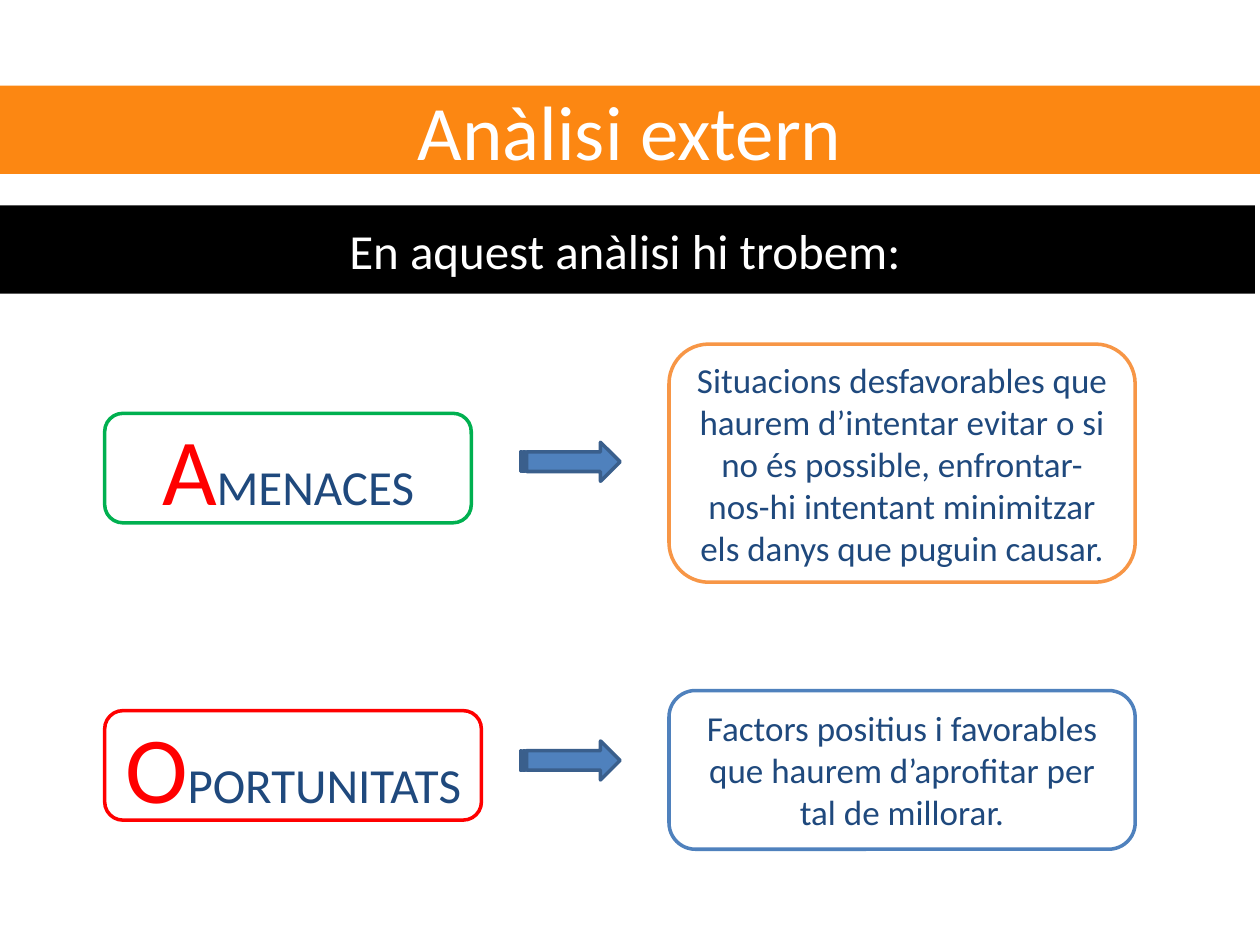
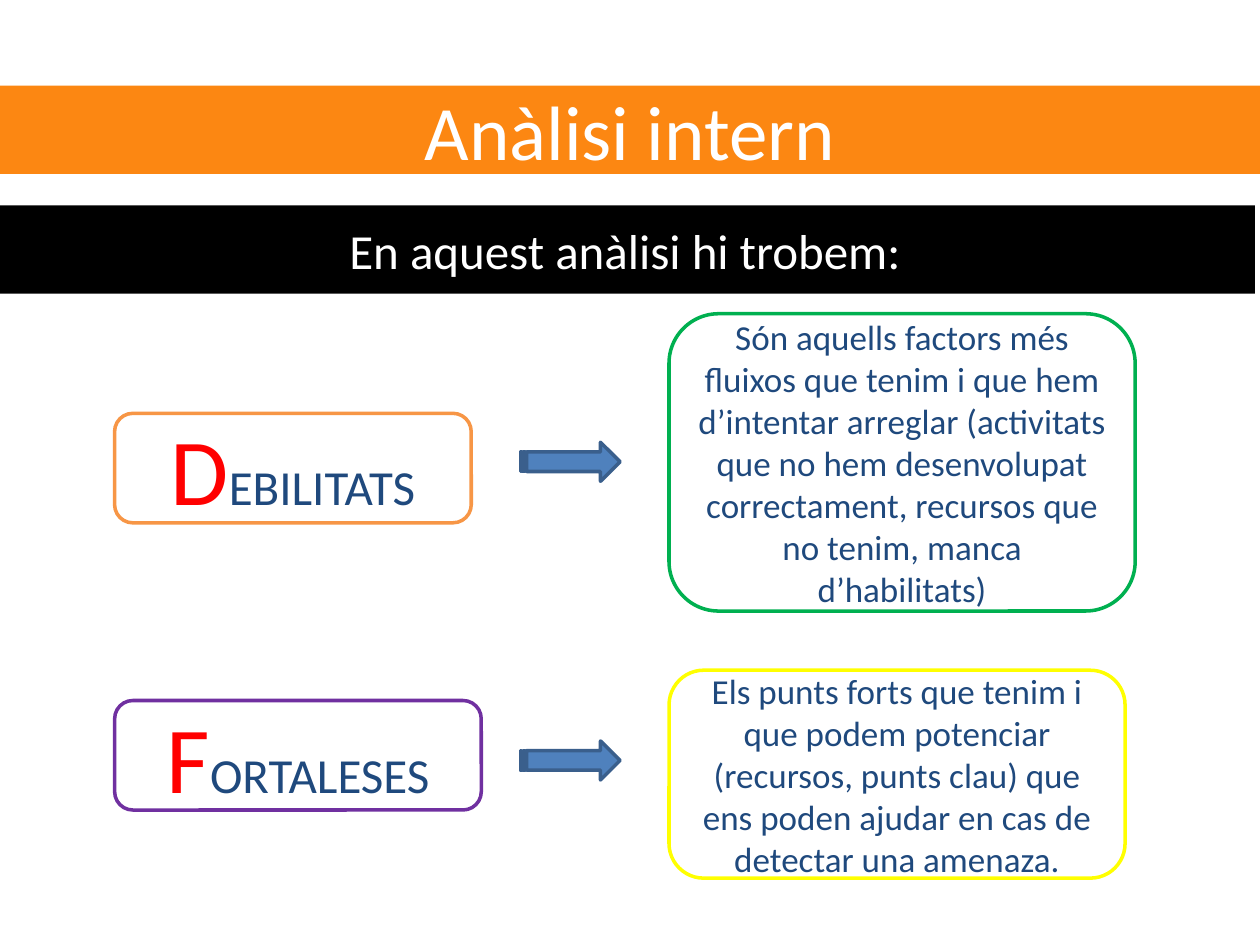
from pptx import Presentation
from pptx.dml.color import RGBColor
from pptx.enum import shapes, text
from pptx.util import Pt

COLORS = {
    "orange_band": "FC8712", "black": "000000", "white": "FFFFFF",
    "navy": "1F497D", "red": "FF0000", "green": "00B050",
    "orange": "F79646", "blue": "4F81BD", "dark_blue": "3A5F8C",
    "purple": "7030A0", "yellow": "FFFF00",
}
FONT = "Calibri"
LABEL_HEIGHT = 62.6
DESCRIPTION_LEFT = 382.3
ARROW_TOPS = (252.7, 423.4)

# Each factor: (word, color, left, top, width), (description, color, top, width, height)
ANALYSES = [
    ("Anàlisi extern", [
        (("AMENACES", "green", 59.8, 236.2, 209.5),
         ("Situacions desfavorables que haurem d’intentar evitar o si no és "
          "possible, enfrontar-nos-hi intentant minimitzar els danys que "
          "puguin causar.", "orange", 196.6, 266.4, 136.1)),
        (("OPORTUNITATS", "red", 59.8, 406.1, 215.3),
         ("Factors positius i favorables que haurem d’aprofitar per tal de "
          "millorar.", "blue", 394.6, 266.4, 90.7)),
    ]),
    ("Anàlisi intern", [
        (("DEBILITATS", "orange", 65.5, 236.2, 203.8),
         ("Són aquells factors més fluixos que tenim i que hem d’intentar "
          "arreglar (activitats que no hem desenvolupat correctament, "
          "recursos que no tenim, manca d’habilitats)",
          "green", 179.3, 266.4, 169.9)),
        (("FORTALESES", "purple", 65.5, 400.3, 209.5),
         ("Els punts forts que tenim i que podem potenciar (recursos, punts "
          "clau) que ens poden ajudar en cas de detectar una amenaza.",
          "yellow", 383, 260.6, 118.8)),
    ]),
]


class SlideBuilder:
    def __init__(self):
        self.presentation = Presentation()
        self.presentation.slide_width = Pt(720)
        self.presentation.slide_height = Pt(540)
        self.slide = None

    def new_slide(self):
        self.slide = self.presentation.slides.add_slide(
            self.presentation.slide_layouts[6])

    def add_shape(self, kind, box, fill, line=None):
        shape = self.slide.shapes.add_shape(kind, *(Pt(value) for value in box))
        shape.shadow.inherit = False
        shape.fill.solid()
        shape.fill.fore_color.rgb = RGBColor.from_string(COLORS[fill])
        if line:
            shape.line.color.rgb = RGBColor.from_string(COLORS[line])
            shape.line.width = Pt(2)
        else:
            shape.line.fill.background()
        return shape

    def add_centred_text(self, shape, *runs):
        """Put (words, size, color) runs in one paragraph."""
        frame = shape.text_frame
        frame.word_wrap = True
        frame.vertical_anchor = text.MSO_ANCHOR.MIDDLE
        paragraph = frame.paragraphs[0]
        paragraph.alignment = text.PP_ALIGN.CENTER
        for words, size, color in runs:
            run = paragraph.add_run()
            run.text = words
            run.font.name = FONT
            run.font.size = Pt(size)
            run.font.color.rgb = RGBColor.from_string(COLORS[color])

    def band(self, words, left, top, size, fill):
        shape = self.add_shape(shapes.MSO_SHAPE.RECTANGLE,
                               (left, top, 720, 50.4), fill)
        self.add_centred_text(shape, (words, size, "white"))

    def rounded_box(self, box, line, *runs):
        shape = self.add_shape(shapes.MSO_SHAPE.ROUNDED_RECTANGLE,
                               box, "white", line)
        self.add_centred_text(shape, *runs)

    def label(self, word, color, left, top, width):
        """Add a factor name with a large red initial."""
        self.rounded_box((left, top, width, LABEL_HEIGHT), color,
                         (word[0], 54, "red"), (word[1:], 28, "navy"))

    def description(self, words, color, top, width, height):
        self.rounded_box((DESCRIPTION_LEFT, top, width, height), color,
                         (words, 20, "navy"))

    def arrow(self, top):
        self.add_shape(shapes.MSO_SHAPE.STRIPED_RIGHT_ARROW,
                       (297.4, top, 56.9, 22.3), "blue", "dark_blue")


def main():
    builder = SlideBuilder()
    for title, factors in ANALYSES:
        builder.new_slide()
        builder.band(title, 0, 49, 44, "orange_band")
        builder.band("En aquest anàlisi hi trobem:", -2.9, 117.4, 28, "black")
        for (label, description), arrow_top in zip(factors, ARROW_TOPS):
            builder.label(*label)
            builder.description(*description)
            builder.arrow(arrow_top)
    builder.presentation.save("out.pptx")


if __name__ == "__main__":
    main()
